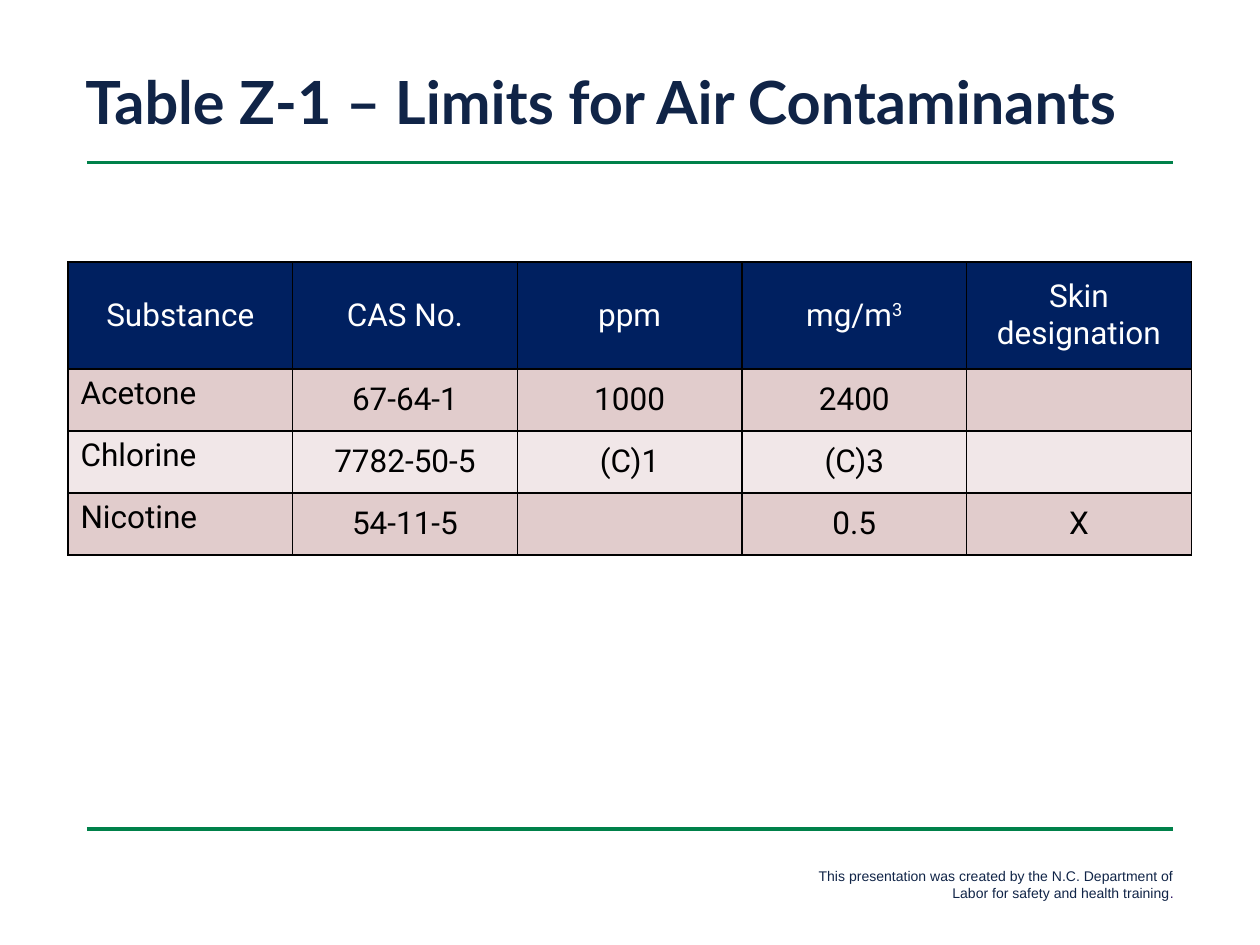
from lxml import etree
from pptx import Presentation
from pptx.dml.color import RGBColor
from pptx.enum.shapes import MSO_CONNECTOR
from pptx.enum.text import MSO_ANCHOR, PP_ALIGN
from pptx.oxml.ns import qn
from pptx.util import Cm, Pt

STRAIGHT = MSO_CONNECTOR.STRAIGHT
TOP, MIDDLE = MSO_ANCHOR.TOP, MSO_ANCHOR.MIDDLE
LEFT, CENTER, RIGHT = PP_ALIGN.LEFT, PP_ALIGN.CENTER, PP_ALIGN.RIGHT

NAVY, GREEN, PURPLE = "102447", "00814A", "2B0E62"
WHITE, BLACK = "FFFFFF", "000000"
HEADER_FILL = "002060"
BAND_FILLS = ["E1CCCC", "F1E7E8"]

RULE_LEFT, RULE_WIDTH = 1.75, 21.9
HEADER_HEIGHT, BODY_HEIGHT = 2.16, 1.25

LIMITS = [
    ["Substance", "CAS No.", "ppm", "mg/m^3", "Skin designation"],
    ["Acetone", "67-64-1", "1000", "2400", ""],
    ["Chlorine", "7782-50-5", "(C)1", "(C)3", ""],
    ["Nicotine", "54-11-5", "", "0.5", "X"],
]


def color(value):
    return RGBColor.from_string(value)


def add_run(paragraph, text, font, size, fill, bold=False):
    run = paragraph.add_run()
    run.text = text
    run.font.name = font
    run.font.size = Pt(size)
    run.font.bold = bold
    run.font.color.rgb = color(fill)
    return run


def add_text_box(slide, left, top, width, height):
    shape = slide.shapes.add_textbox(Cm(left), Cm(top), Cm(width), Cm(height))
    shape.text_frame.word_wrap = True
    return shape.text_frame


def add_rule(slide, left, top, width):
    connector = slide.shapes.add_connector(
        STRAIGHT, Cm(left), Cm(top), Cm(left + width), Cm(top))
    connector.line.color.rgb = color(GREEN)
    connector.line.width = Pt(2)
    etree.SubElement(connector._element.spPr, qn("a:effectLst"))


def add_title(slide, left, top, width, height):
    frame = add_text_box(slide, left, top, width, height)
    frame.margin_top = Cm(0.2)
    frame.vertical_anchor = TOP
    paragraph = frame.paragraphs[0]
    paragraph.line_spacing = 0.9
    add_run(paragraph, "Table Z-1 – Limits for Air Contaminants",
            "Lato", 34, NAVY, bold=True)


def add_footer(slide, left, top, width, height):
    frame = add_text_box(slide, left, top, width, height)
    paragraph = frame.paragraphs[0]
    paragraph.alignment = RIGHT
    add_run(paragraph, "This presentation was created by the N.C. Department of "
            "Labor for safety and health training", "Arial", 8, NAVY)
    add_run(paragraph, ".", "Arial", 8, PURPLE)


def add_borders(cell):
    properties = cell._tc.get_or_add_tcPr()
    for side in ("lnL", "lnR", "lnT", "lnB"):
        line = etree.SubElement(properties, qn(f"a:{side}"), w=str(Pt(1)))
        fill = etree.SubElement(line, qn("a:solidFill"))
        etree.SubElement(fill, qn("a:srgbClr"), val=BLACK)


def fill_cell(cell, text, fill, text_color, is_name):
    add_borders(cell)
    cell.fill.solid()
    cell.fill.fore_color.rgb = color(fill)
    cell.vertical_anchor = TOP if is_name else MIDDLE
    paragraph = cell.text_frame.paragraphs[0]
    paragraph.alignment = LEFT if is_name else CENTER
    base, _, superscript = text.partition("^")
    if base:
        add_run(paragraph, base, "Roboto", 18, text_color)
    if superscript:
        run = add_run(paragraph, superscript, "Roboto", 18, text_color)
        run._r.get_or_add_rPr().set("baseline", "30000")


def add_limits_table(slide, left, top, width):
    heights = [HEADER_HEIGHT] + [BODY_HEIGHT] * (len(LIMITS) - 1)
    column_count = len(LIMITS[0])
    table = slide.shapes.add_table(
        len(LIMITS), column_count,
        Cm(left), Cm(top), Cm(width), Cm(sum(heights))).table
    for column in table.columns:
        column.width = Cm(width / column_count)
    for row_index, values in enumerate(LIMITS):
        table.rows[row_index].height = Cm(heights[row_index])
        is_header = row_index == 0
        fill = HEADER_FILL if is_header else BAND_FILLS[(row_index - 1) % 2]
        text_color = WHITE if is_header else BLACK
        for column_index, text in enumerate(values):
            is_name = column_index == 0 and not is_header
            fill_cell(table.cell(row_index, column_index), text,
                      fill, text_color, is_name)


def main():
    presentation = Presentation()
    presentation.slide_width = Cm(25.4)
    presentation.slide_height = Cm(19.05)
    slide = presentation.slides.add_slide(presentation.slide_layouts[6])
    for rule_top in (3.28, 16.71):
        add_rule(slide, RULE_LEFT, rule_top, RULE_WIDTH)
    add_footer(slide, 15.65, 17.37, 8.26, 0.94)
    add_title(slide, 1.47, 1.27, 23.5, 3)
    add_limits_table(slide, 1.37, 5.28, 22.65)
    presentation.save("out.pptx")


if __name__ == "__main__":
    main()
